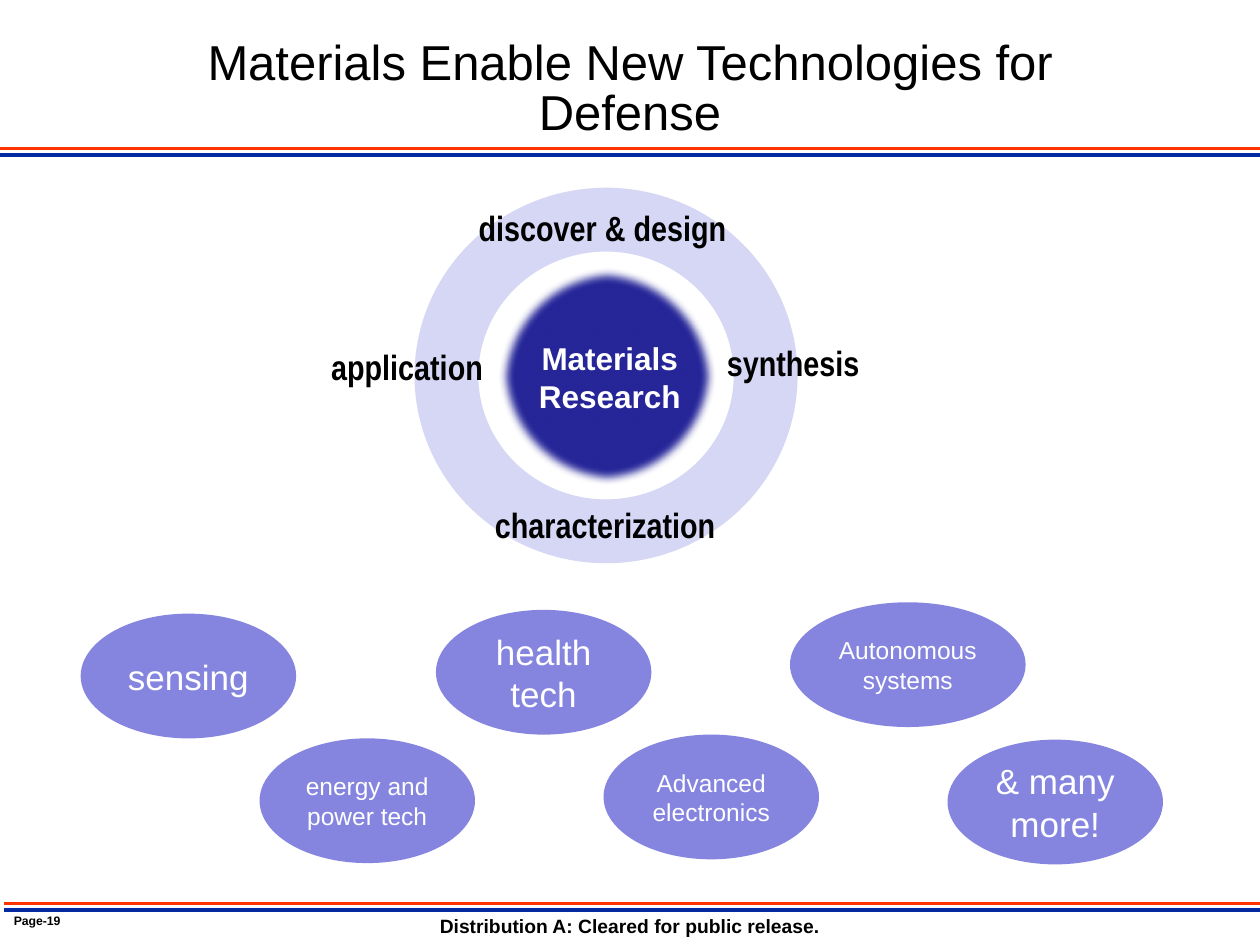
from lxml import etree
from pptx import Presentation
from pptx.dml.color import RGBColor
from pptx.enum.shapes import MSO_CONNECTOR, MSO_SHAPE
from pptx.enum.text import MSO_ANCHOR, MSO_AUTO_SIZE, PP_ALIGN
from pptx.oxml.ns import qn
from pptx.util import Pt

PX = 9144
WIDTH, HEIGHT = 1000, 750
STRAIGHT = MSO_CONNECTOR.STRAIGHT
OVAL, DONUT = MSO_SHAPE.OVAL, MSO_SHAPE.DONUT
LEFT, CENTER = PP_ALIGN.LEFT, PP_ALIGN.CENTER
TOP, MIDDLE = MSO_ANCHOR.TOP, MSO_ANCHOR.MIDDLE
NO_FIT = MSO_AUTO_SIZE.NONE

BLACK = RGBColor(0x00, 0x00, 0x00)
WHITE = RGBColor(0xFF, 0xFF, 0xFF)
BLUE = RGBColor(0x03, 0x2A, 0xA1)
ORANGE = RGBColor(0xFF, 0x33, 0x00)
NAVY = RGBColor(0x26, 0x26, 0x99)
LAVENDER = RGBColor(0xD6, 0xD6, 0xF5)
VIOLET = RGBColor(0x85, 0x85, 0xE0)


def emu(*lengths):
    return [n * PX for n in lengths]


class Deck:
    font = "Arial"

    def __init__(self):
        self.prs = Presentation()
        self.prs.slide_width, self.prs.slide_height = emu(WIDTH, HEIGHT)
        self.s = self.prs.slides.add_slide(self.prs.slide_layouts[5])

    def set_text(self, sp, text, size, color=BLACK, bold=False, align=CENTER,
                 anchor=TOP, wrap=True, font=None, spacing=None):
        tf = sp.text_frame
        frame = {"text": text, "auto_size": NO_FIT, "word_wrap": wrap,
                 "vertical_anchor": anchor}
        for name, value in frame.items():
            setattr(tf, name, value)
        style = {"name": font or self.font, "size": Pt(size), "bold": bold}
        for p in tf.paragraphs:
            p.alignment = align
            p.line_spacing = spacing
            for r in p.runs:
                for name, value in style.items():
                    setattr(r.font, name, value)
                r.font.color.rgb = color

    def title(self, box, text, size, **fmt):
        sp = self.s.shapes.title
        sp.left, sp.top, sp.width, sp.height = emu(*box)
        self.set_text(sp, text, size, anchor=MIDDLE, **fmt)

    def text(self, box, text, size, inset=10, **fmt):
        sp = self.s.shapes.add_textbox(*emu(*box))
        self.set_text(sp, text, size, bold=True, **fmt)
        sp.text_frame.margin_left = inset * PX

    def shape(self, kind, box, fill):
        sp = self.s.shapes.add_shape(kind, *emu(*box))
        sp.shadow.inherit = False
        sp.fill.solid()
        sp.fill.fore_color.rgb = fill
        sp.line.fill.background()
        return sp

    def bubble(self, box, text, size):
        sp = self.shape(OVAL, box, VIOLET)
        self.set_text(sp, text, size, color=WHITE, anchor=MIDDLE)

    def soft_disc(self, box, fill, radius):
        sp = self.shape(OVAL, box, fill)
        sp.line.color.rgb = BLACK
        sp.line.width = Pt(0.75)
        effects = sp._element.spPr.find(qn("a:effectLst"))
        etree.SubElement(effects, qn("a:softEdge"), rad=str(radius * PX))

    def ring(self, box, fill, thickness):
        self.shape(DONUT, box, fill).adjustments[0] = thickness

    def rule(self, x, y, color, width):
        line = self.s.shapes.add_connector(STRAIGHT, *emu(x, y, x + WIDTH, y))
        line.line.color.rgb = color
        line.line.width = Pt(width)
        etree.SubElement(line._element.spPr, qn("a:effectLst"))

    def double_rule(self, x, y):
        self.rule(x, y + 5, BLUE, 2.25)
        self.rule(x, y, ORANGE, 2)


def main():
    deck = Deck()
    deck.double_rule(0, 118)
    deck.double_rule(3, 717)
    deck.text((11, 720, 204, 22), "Page-19", 7, inset=0, align=LEFT)
    deck.text((88, 721, 824, 29), "Distribution A: Cleared for public release.", 11)
    deck.title((117, 16, 766, 112),
               "Materials Enable New Technologies for Defense", 28, spacing=0.85)

    deck.soft_disc((395, 212, 173, 173), NAVY, 7)
    deck.text((412, 264, 144, 71), "Materials\nResearch", 18, color=WHITE, wrap=False)
    deck.ring((329, 149, 304, 298), LAVENDER, 0.17)
    stages = [
        (370, 159, 218, "discover & design"),
        (567, 266, 128, "synthesis"),
        (383, 395, 197, "characterization"),
        (253, 269, 141, "application"),
    ]
    for x, y, w, stage in stages:
        deck.text((x, y, w, 44), stage, 20, font="Arial Narrow", align=LEFT, wrap=False)

    technologies = [
        (64, 487, 171, "sensing", 20),
        (206, 586, 171, "energy and power tech", 14),
        (346, 484, 171, "health tech", 20),
        (479, 583, 171, "Advanced electronics", 14),
        (627, 478, 187, "Autonomous systems", 14),
        (752, 587, 171, "& many more!", 20),
    ]
    for x, y, w, name, size in technologies:
        deck.bubble((x, y, w, 99), name, size)

    deck.prs.save("out.pptx")


if __name__ == "__main__":
    main()
